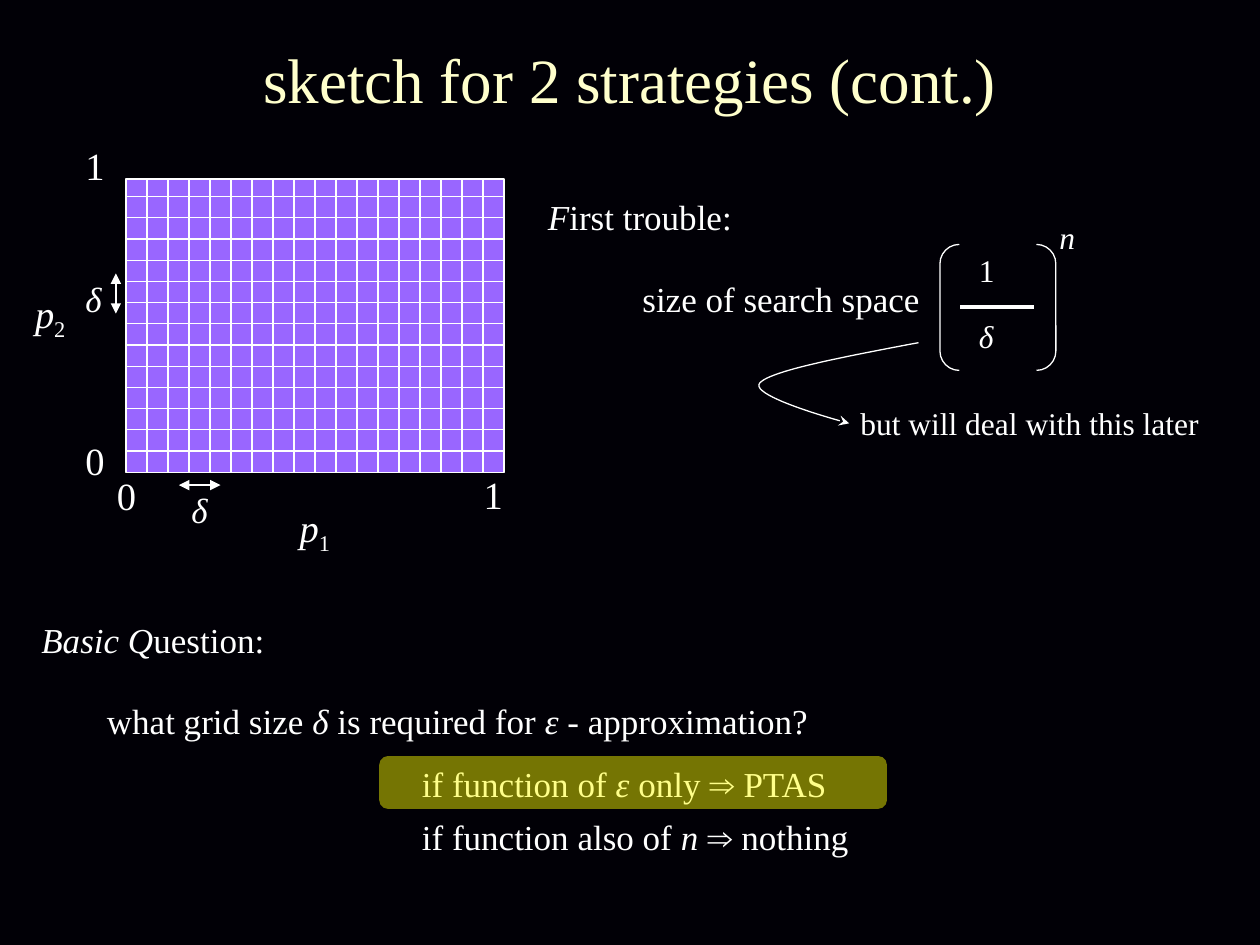
from pptx import Presentation
from pptx.dml.color import RGBColor
from pptx.enum.shapes import MSO_CONNECTOR, MSO_SHAPE
from pptx.enum.text import MSO_ANCHOR, PP_ALIGN
from pptx.oxml.ns import qn
from pptx.util import Inches, Pt
from lxml import etree

STRAIGHT = MSO_CONNECTOR.STRAIGHT
RECT = MSO_SHAPE.RECTANGLE
ROUNDED = MSO_SHAPE.ROUNDED_RECTANGLE
BRACKETS = MSO_SHAPE.DOUBLE_BRACKET
CENTER = PP_ALIGN.CENTER
MIDDLE = MSO_ANCHOR.MIDDLE

COLORS = {
    "background": "010006",
    "title": "FFFFCC",
    "ink": "FFFFFF",
    "grid": "9966FF",
    "highlight": "FFFF00",
}
FONT = "Times New Roman"
PLAIN, ITALIC, SUB = "plain", "italic", "sub"


def rgb(name):
    return RGBColor.from_string(COLORS[name])


def bezier(p0, p1, p2, p3, steps=24):
    """Points along a cubic curve, without its start point."""
    points = []
    for k in range(1, steps + 1):
        t = k / steps
        u = 1 - t
        points.append(tuple(
            u**3 * a + 3 * u * u * t * b + 3 * u * t * t * c + t**3 * d
            for a, b, c, d in zip(p0, p1, p2, p3)))
    return points


class Canvas:
    """Holds the slide and draws each kind of element in its style."""

    def __init__(self, slide):
        self.s = slide
        fill = slide.background.fill
        fill.solid()
        fill.fore_color.rgb = rgb("background")

    def text(self, left, top, width, height, runs, size=20, color="ink", wrap=False):
        """Adds a text box; runs is a string or a list of (text, style)."""
        sp = self.s.shapes.add_textbox(
            Inches(left), Inches(top), Inches(width), Inches(height))
        tf = sp.text_frame
        tf.word_wrap = wrap
        p = tf.paragraphs[0]
        for text, style in [(runs, PLAIN)] if isinstance(runs, str) else runs:
            r = p.add_run()
            r.text = text
            r.font.name = FONT
            r.font.size = Pt(size)
            r.font.color.rgb = rgb(color)
            r.font.italic = style == ITALIC
            if style == SUB:
                r.font._element.set("baseline", "-25000")
        return sp

    def outline(self, sp, weight=0.75, **ends):
        """Draws the line of a shape; ends gives headEnd and tailEnd types."""
        sp.line.color.rgb = rgb("ink")
        sp.line.width = Pt(weight)
        ln = sp._element.spPr.find(qn("a:ln"))
        for tag, kind in ends.items():
            etree.SubElement(ln, qn("a:" + tag), type=kind)

    def line(self, x1, y1, x2, y2, weight=0.75, **ends):
        c = self.s.shapes.add_connector(
            STRAIGHT, Inches(x1), Inches(y1), Inches(x2), Inches(y2))
        self.outline(c, weight, **ends)
        etree.SubElement(c._element.spPr, qn("a:effectLst"))

    def shape(self, kind, left, top, width, height, fill=None, alpha=None,
              lined=True, corner=None):
        sp = self.s.shapes.add_shape(
            kind, Inches(left), Inches(top), Inches(width), Inches(height))
        sp.shadow.inherit = False
        if corner is not None:
            sp.adjustments[0] = corner
        if fill:
            sp.fill.solid()
            sp.fill.fore_color.rgb = rgb(fill)
        else:
            sp.fill.background()
        if alpha is not None:
            clr = sp._element.spPr.find(qn("a:solidFill"))[0]
            etree.SubElement(clr, qn("a:alpha"), val=str(alpha * 1000))
        if lined:
            self.outline(sp)
        else:
            sp.line.fill.background()

    def curve(self, start, *segments, **ends):
        points = [start]
        for segment in segments:
            points += bezier(points[-1], *segment)
        points = [(Inches(x), Inches(y)) for x, y in points]
        builder = self.s.shapes.build_freeform(*points[0], scale=1.0)
        builder.add_line_segments(points[1:], close=False)
        sp = builder.convert_to_shape()
        sp.shadow.inherit = False
        sp.fill.background()
        self.outline(sp, **ends)


def draw_question(canvas):
    canvas.text(0.23, 4.86, 2.01, 0.44, [("Basic Q", ITALIC), ("uestion:", PLAIN)])
    canvas.text(0.75, 5.5, 8.75, 0.67, [
        ("what grid size ", PLAIN), ("δ", ITALIC), (" is required for ", PLAIN),
        ("ε", ITALIC), (" - approximation?", PLAIN)], wrap=True)
    canvas.text(3.25, 6, 5.58, 0.67, [
        ("if function of ", PLAIN), ("ε", ITALIC), (" only ⇒ PTAS", PLAIN)], wrap=True)
    canvas.text(3.25, 6.42, 5.58, 0.67, [
        ("if function also of ", PLAIN), ("n ", ITALIC), ("⇒ nothing", PLAIN)], wrap=True)
    canvas.shape(ROUNDED, 3.01, 6, 4.03, 0.42, "highlight", alpha=46,
                 lined=False, corner=0.167)


def draw_grid(canvas):
    left, top, right, bottom = 1, 1.42, 4, 3.75
    canvas.shape(RECT, left, top, right - left, bottom - top, "grid")
    columns = 18
    for k in range(1, columns):
        x = left + k * (right - left) / columns
        canvas.line(x, top, x, bottom)
    first, last, rows = 1.56, 3.58, 13
    for k in range(rows):
        y = first + k * (last - first) / (rows - 1)
        canvas.line(left, y, right, y)

    for x, y, label in [(0.58, 3.42, "0"), (0.58, 1.08, "1"),
                        (0.83, 3.7, "0"), (3.74, 3.69, "1")]:
        canvas.text(x, y, 0.36, 0.47, label, 22)
    for x, y, index in [(0.18, 2.25, "2"), (2.28, 3.95, "1")]:
        canvas.text(x, y, 0.5, 0.47, [("p", ITALIC), (index, SUB)], 22)

    both = {"headEnd": "triangle", "tailEnd": "triangle"}
    canvas.line(0.92, 2.17, 0.92, 2.49, **both)
    canvas.line(1.42, 3.85, 1.75, 3.85, **both)
    for x, y in [(0.58, 2.15), (1.42, 3.83)]:
        canvas.text(x, y, 0.34, 0.44, [("δ", ITALIC)])


def draw_trouble(canvas):
    canvas.text(4.25, 1.5, 1.69, 0.44, [("F", ITALIC), ("irst trouble:", PLAIN)])
    canvas.text(5, 2.15, 2.49, 0.44, "size of search space")
    canvas.text(7.67, 1.94, 0.5, 0.5, "1", 18)
    canvas.line(7.62, 2.44, 8.21, 2.44, weight=2.25)
    canvas.text(7.67, 2.47, 0.5, 0.5, [("δ", ITALIC)], 18)
    canvas.text(8.31, 1.68, 0.39, 0.5, [("n", ITALIC)], 18)
    canvas.shape(BRACKETS, 7.46, 1.94, 0.92, 1, corner=0.167)
    canvas.curve((7.29, 2.72),
                 ((6.71, 2.83), (6.12, 2.94), (6.03, 3.04)),
                 ((5.94, 3.15), (6.74, 3.36), (6.74, 3.36)),
                 tailEnd="stealth")
    canvas.text(6.73, 3.16, 2.92, 0.4, "but will deal with this later", 18)


def main():
    prs = Presentation()
    prs.slide_width, prs.slide_height = Inches(10), Inches(7.5)
    canvas = Canvas(prs.slides.add_slide(prs.slide_layouts[6]))
    title = canvas.text(0.33, 0, 9.34, 1.25, "sketch for 2 strategies (cont.)",
                        36, "title", wrap=True)
    title.text_frame.vertical_anchor = MIDDLE
    title.text_frame.paragraphs[0].alignment = CENTER
    draw_question(canvas)
    draw_grid(canvas)
    draw_trouble(canvas)
    prs.save("out.pptx")


if __name__ == "__main__":
    main()
